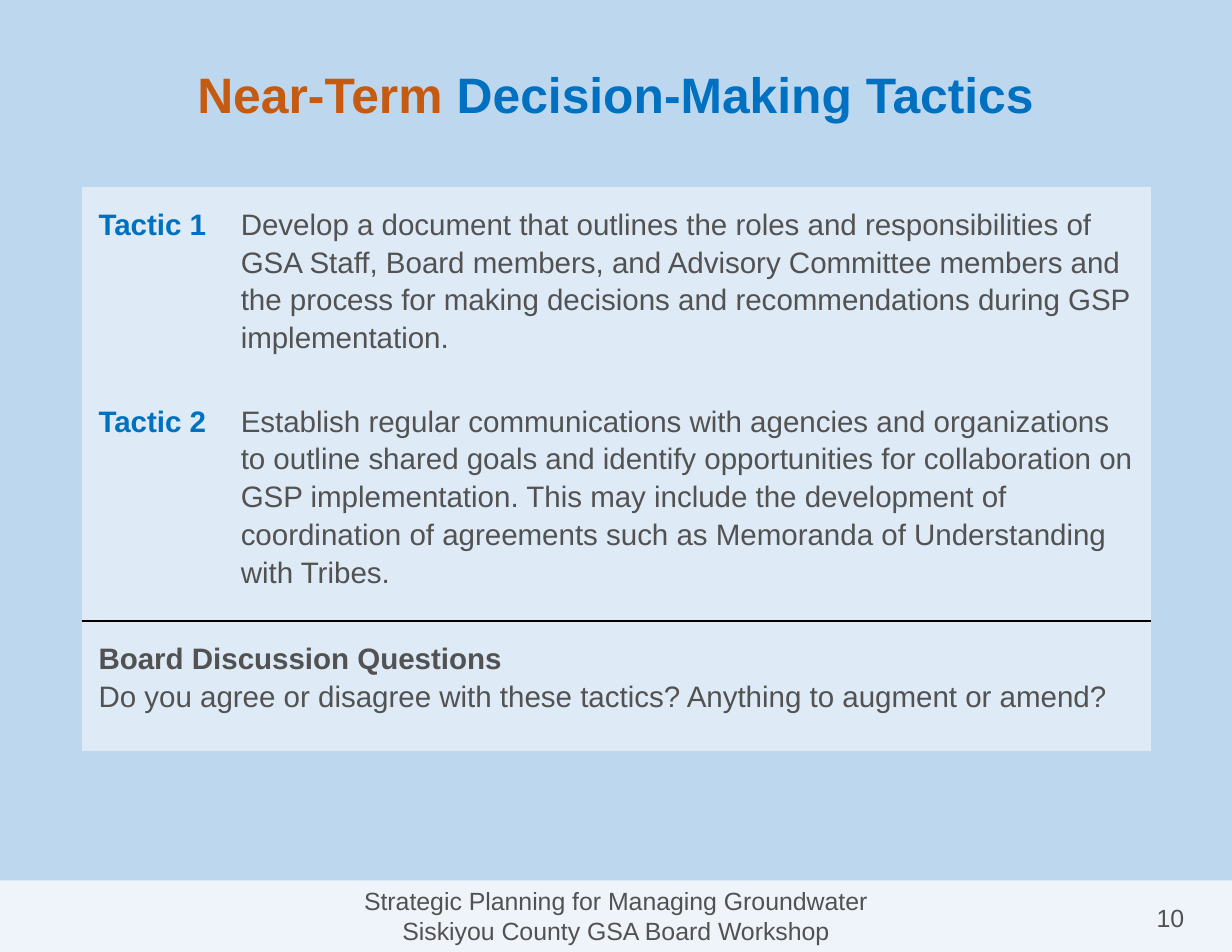
from pptx import Presentation
from pptx.dml.color import RGBColor
from pptx.enum.shapes import MSO_SHAPE
from pptx.enum.text import MSO_ANCHOR, PP_ALIGN
from pptx.oxml import parse_xml
from pptx.oxml.ns import nsdecls, qn
from pptx.util import Inches, Pt

SKY = RGBColor(0xBD, 0xD7, 0xEE)
PALE = RGBColor(0xDE, 0xEA, 0xF6)
BLUE = RGBColor(0x00, 0x70, 0xC0)
ORANGE = RGBColor(0xC5, 0x5A, 0x11)
GRAY = RGBColor(0x52, 0x52, 0x52)
WHITE = RGBColor(0xFF, 0xFF, 0xFF)

NO_GRID_STYLE = "{2D5ABB26-0587-4C30-8999-92F81FD0307C}"

TACTICS = [
    ("Tactic 1",
     "Develop a document that outlines the roles and responsibilities of GSA Staff, "
     "Board members, and Advisory Committee members and the process for making "
     "decisions and recommendations during GSP implementation."),
    ("Tactic 2",
     "Establish regular communications with agencies and organizations to outline "
     "shared goals and identify opportunities for collaboration on GSP implementation. "
     "This may include the development of coordination of agreements such as "
     "Memoranda of Understanding with Tribes."),
]
QUESTIONS = [
    ("Board Discussion Questions", GRAY, True),
    ("Do you agree or disagree with these tactics? Anything to augment or amend?", GRAY, False),
]
FOOTER = ["Strategic Planning for Managing Groundwater", "Siskiyou County GSA Board Workshop"]


def add_run(p, text, size, color, bold=False):
    """Append one formatted run to a paragraph."""
    r = p.add_run()
    r.text = text
    r.font.name = "Arial"
    r.font.size = Pt(size)
    r.font.bold = bold
    r.font.color.rgb = color


def add_lines(tf, lines, size, align=None, spacing=None):
    """Write (text, color, bold) lines as paragraphs."""
    for i, (text, color, bold) in enumerate(lines):
        p = tf.add_paragraph() if i else tf.paragraphs[0]
        p.alignment = align
        p.line_spacing = spacing
        add_run(p, text, size, color, bold)


def set_title(s):
    """Place and fill the two-colour title."""
    sp = s.shapes.title
    sp.left, sp.top, sp.width, sp.height = (Inches(v) for v in (0.55, 0.34, 9.9, 0.99))
    tf = sp.text_frame
    tf.vertical_anchor = MSO_ANCHOR.MIDDLE
    p = tf.paragraphs[0]
    p.alignment = PP_ALIGN.CENTER
    add_run(p, "Near-Term", 32, ORANGE, True)
    add_run(p, " Decision-Making Tactics", 32, BLUE, True)


def add_footer(s):
    """Add the translucent footer band and the page number."""
    sp = s.shapes.add_shape(MSO_SHAPE.RECTANGLE, 0, Inches(7.86), Inches(11), Inches(0.64))
    sp.shadow.inherit = False
    sp.line.fill.background()
    sp.fill.solid()
    sp.fill.fore_color.rgb = WHITE
    color = sp.fill._xPr.find(qn("a:solidFill"))[0]
    color.append(parse_xml(f'<a:alpha {nsdecls("a")} val="75000"/>'))
    tf = sp.text_frame
    tf.vertical_anchor = MSO_ANCHOR.TOP
    add_lines(tf, [(text, GRAY, False) for text in FOOTER], 16, PP_ALIGN.CENTER)

    box = s.shapes.add_textbox(Inches(10.1), Inches(8.01), Inches(0.7), Inches(0.37))
    box.text_frame.word_wrap = True
    add_lines(box.text_frame, [("10", GRAY, False)], 16, PP_ALIGN.CENTER)


def fill_cell(cell, lines):
    """Format a table cell and write its lines."""
    cell.margin_left = cell.margin_right = Inches(0.15)
    cell.margin_top = cell.margin_bottom = Inches(0.15)
    cell.fill.solid()
    cell.fill.fore_color.rgb = PALE
    add_lines(cell.text_frame, lines, 19, spacing=1.15)


def add_border(cell, side):
    """Draw a thin black line on one side of a cell."""
    cell._tc.get_or_add_tcPr().insert(0, parse_xml(
        f'<a:{side} {nsdecls("a")} w="12700"><a:solidFill><a:srgbClr val="000000"/>'
        f'</a:solidFill></a:{side}>'))


def add_tactics_table(s):
    """Add the tactics with the discussion questions below them."""
    widths, heights = (1.27, 8.28), (1.75, 2.12, 1.16)
    frame = s.shapes.add_table(3, 2, Inches(0.73), Inches(1.67),
                               Inches(sum(widths)), Inches(sum(heights)))
    table = frame.table
    table.first_row = table.horz_banding = False
    table._tbl.tblPr.find(qn("a:tableStyleId")).text = NO_GRID_STYLE
    for col, width in zip(table.columns, widths):
        col.width = Inches(width)
    for row, height in zip(table.rows, heights):
        row.height = Inches(height)
    for i, (label, text) in enumerate(TACTICS):
        fill_cell(table.cell(i, 0), [(label, BLUE, True)])
        fill_cell(table.cell(i, 1), [(text, GRAY, False)])
    table.cell(2, 0).merge(table.cell(2, 1))
    fill_cell(table.cell(2, 0), QUESTIONS)
    for col in range(2):
        add_border(table.cell(1, col), "lnB")
        add_border(table.cell(2, col), "lnT")


def main():
    """Build and save the slide."""
    prs = Presentation()
    prs.slide_width, prs.slide_height = Inches(11), Inches(8.5)
    s = prs.slides.add_slide(prs.slide_layouts[5])
    s.background.fill.solid()
    s.background.fill.fore_color.rgb = SKY
    set_title(s)
    add_footer(s)
    add_tactics_table(s)
    prs.save("out.pptx")


if __name__ == "__main__":
    main()
